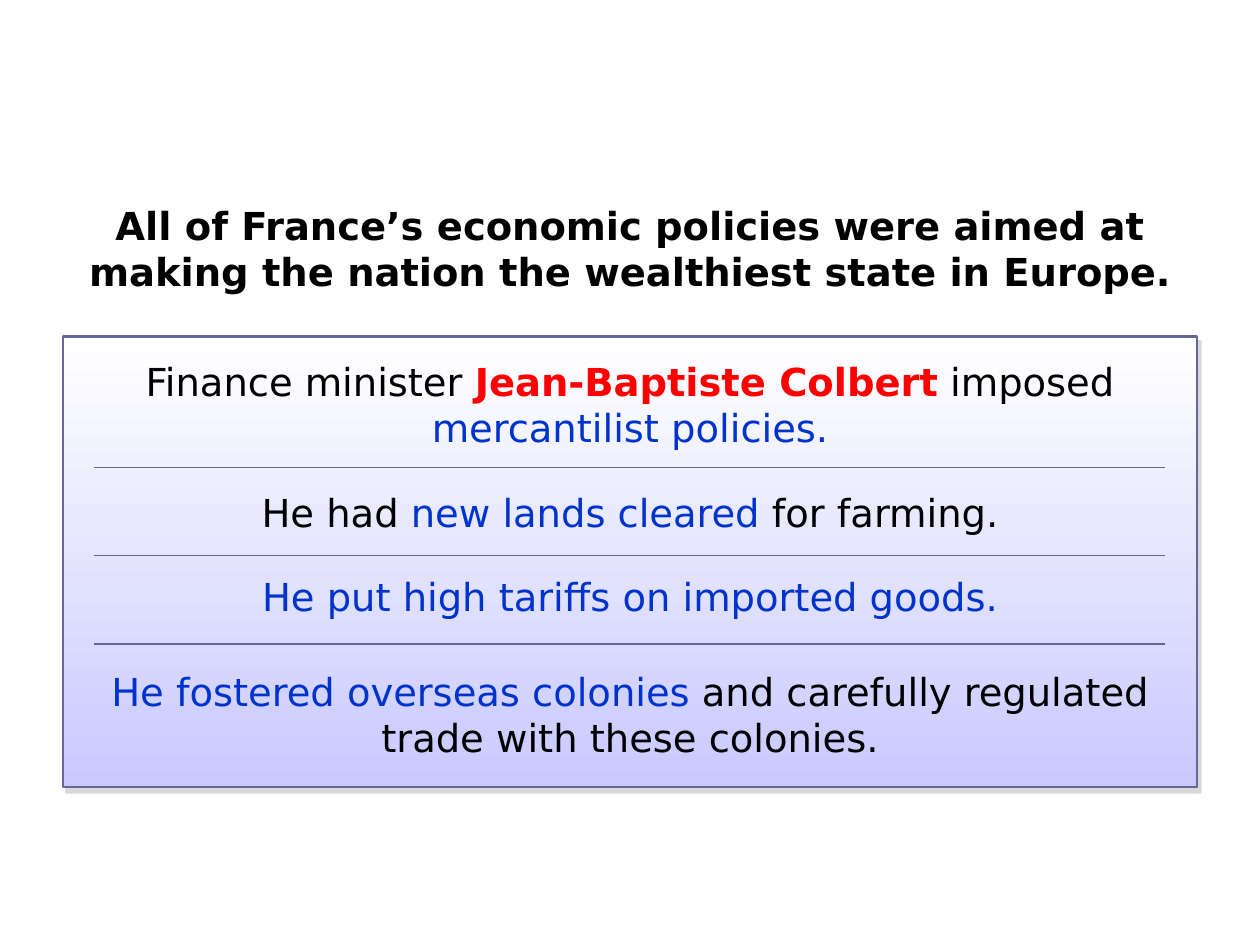
"""Build a slide on the economic policies of Colbert in France."""
import lxml.etree
import pptx
import pptx.dml.color
import pptx.enum.shapes
import pptx.enum.text
import pptx.oxml.ns
import pptx.util
from pptx.util import Cm

RGBColor = pptx.dml.color.RGBColor
BLACK = RGBColor(0x00, 0x00, 0x00)
RED = RGBColor(0xFF, 0x00, 0x00)
BLUE = RGBColor(0x00, 0x33, 0xCC)
WHITE = RGBColor(0xFF, 0xFF, 0xFF)
LAVENDER = RGBColor(0xC9, 0xC9, 0xFF)
SLATE = RGBColor(0x66, 0x66, 0x99)
SHADOW_GRAY = RGBColor(0xB2, 0xB2, 0xB2)

FONT = "DejaVu Sans"
FONT_SIZE = pptx.util.Pt(22)
LEFT, WIDTH = Cm(1.27), Cm(22.86)
ONE_LINE, TWO_LINES = Cm(1.19), Cm(2.13)
PANEL_TOP, PANEL_HEIGHT = Cm(6.78), Cm(9.09)
RULES_LEFT, RULES_TOP, RULES_WIDTH = Cm(1.9), Cm(8.33), Cm(21.59)
RULE_ROWS = [Cm(1.09), Cm(1.78), Cm(1.78), Cm(1.88)]

HEADING = (Cm(3.94), TWO_LINES, [
    ("All of France’s economic policies were aimed at making the nation "
     "the wealthiest state in Europe.", BLACK, True)])
POLICIES = [
    (Cm(7.09), TWO_LINES, [
        ("Finance minister ", BLACK, False),
        ("Jean-Baptiste Colbert", RED, True),
        (" imposed ", BLACK, False),
        ("mercantilist policies.", BLUE, False)]),
    (Cm(9.73), ONE_LINE, [
        ("He had ", BLACK, False),
        ("new lands cleared", BLUE, False),
        (" for farming.", BLACK, False)]),
    (Cm(11.43), ONE_LINE, [
        ("He put high tariffs on imported goods.", BLUE, False)]),
    (Cm(13.34), TWO_LINES, [
        ("He fostered overseas colonies", BLUE, False),
        (" and carefully regulated trade with these colonies.", BLACK, False)]),
]


def add_element(parent, tag, **attributes):
    return lxml.etree.SubElement(parent, pptx.oxml.ns.qn(tag), attributes)


def add_statement(slide, top, height, phrases):
    frame = slide.shapes.add_textbox(LEFT, top, WIDTH, height).text_frame
    frame.word_wrap = True
    frame.auto_size = pptx.enum.text.MSO_AUTO_SIZE.SHAPE_TO_FIT_TEXT
    paragraph = frame.paragraphs[0]
    paragraph.alignment = pptx.enum.text.PP_ALIGN.CENTER
    paragraph.font.name = FONT
    paragraph.font.size = FONT_SIZE
    for words, color, bold in phrases:
        run = paragraph.add_run()
        run.text = words
        run.font.color.rgb = color
        run.font.bold = bold


def add_panel(slide):
    panel = slide.shapes.add_shape(
        pptx.enum.shapes.MSO_SHAPE.RECTANGLE, LEFT, PANEL_TOP, WIDTH, PANEL_HEIGHT)
    panel.fill.gradient()
    panel.fill.gradient_angle = 270
    for stop, color in zip(panel.fill.gradient_stops, (WHITE, LAVENDER)):
        stop.color.rgb = color
    panel.line.color.rgb = SLATE
    panel.line.width = pptx.util.Pt(1.5)
    panel.shadow.inherit = False
    effects = panel._element.spPr.find(pptx.oxml.ns.qn("a:effectLst"))
    shadow = add_element(effects, "a:outerShdw", blurRad="0",
                         dist=str(pptx.util.Pt(3.6)), dir=str(56 * 60000),
                         algn="ctr", rotWithShape="0")
    tint = add_element(shadow, "a:srgbClr", val=str(SHADOW_GRAY))
    add_element(tint, "a:alpha", val="50000")


def set_borders(cell, ruled_sides):
    properties = cell._tc.get_or_add_tcPr()
    for side in "LRTB":
        border = add_element(properties, f"a:ln{side}", w=str(pptx.util.Pt(1)))
        if side in ruled_sides:
            add_element(add_element(border, "a:solidFill"), "a:srgbClr", val=str(SLATE))
        else:
            add_element(border, "a:noFill")


def add_rules(slide):
    rules = slide.shapes.add_table(
        len(RULE_ROWS), 1, RULES_LEFT, RULES_TOP, RULES_WIDTH, sum(RULE_ROWS)).table
    rules.first_row = False
    rules.horz_banding = False
    last = len(RULE_ROWS) - 1
    for index, height in enumerate(RULE_ROWS):
        rules.rows[index].height = height
        cell = rules.cell(index, 0)
        set_borders(cell, ("T" if index > 0 else "") + ("B" if index < last else ""))
        cell.fill.background()


def main():
    deck = pptx.Presentation()
    deck.slide_width, deck.slide_height = Cm(25.4), Cm(19.05)
    slide = deck.slides.add_slide(deck.slide_layouts[6])
    add_statement(slide, *HEADING)
    add_panel(slide)
    add_rules(slide)
    for policy in POLICIES:
        add_statement(slide, *policy)
    deck.save("out.pptx")


if __name__ == "__main__":
    main()
